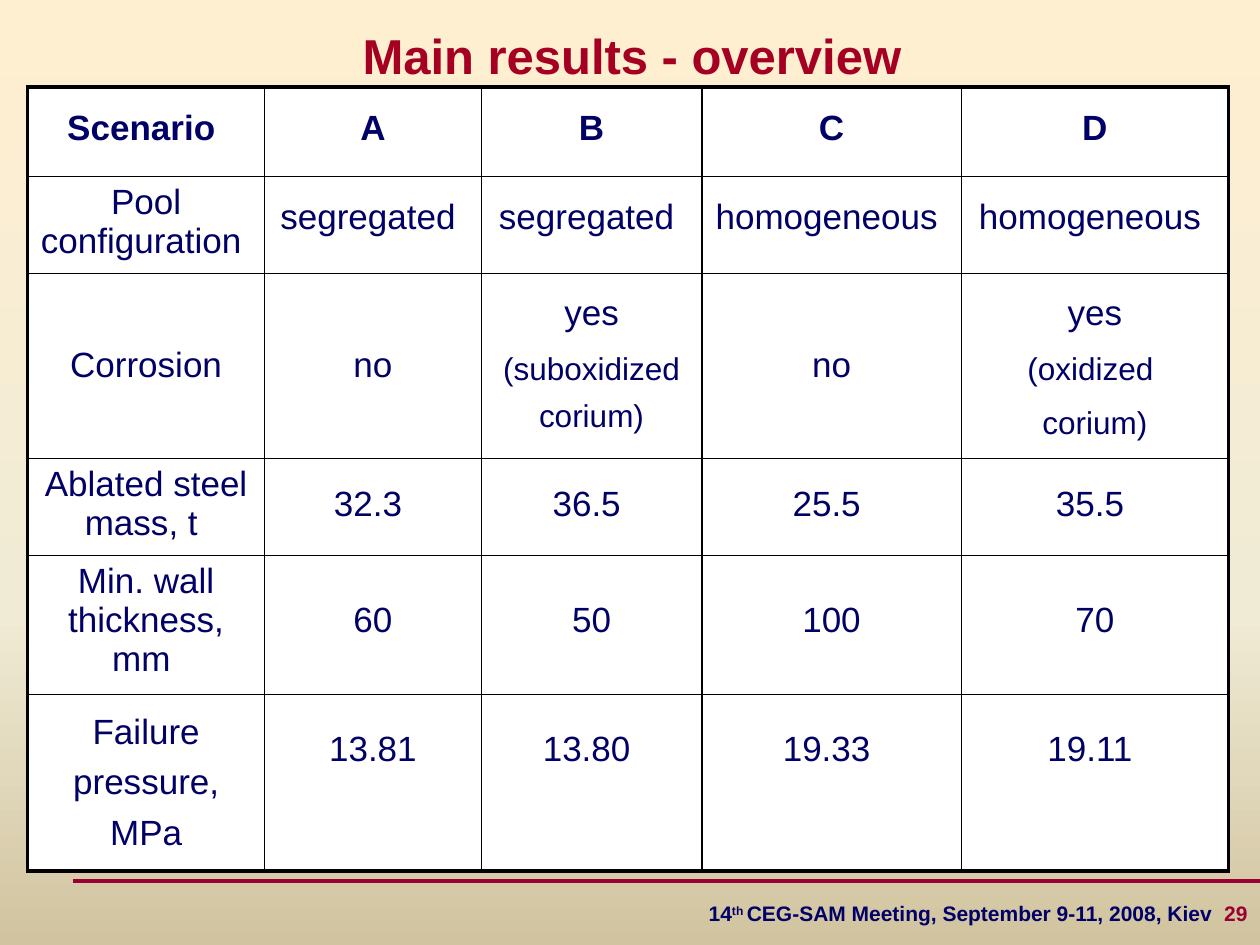
from copy import deepcopy
from pptx import Presentation
from pptx.dml.color import RGBColor
from pptx.enum import shapes, text
from pptx.oxml import parse_xml
from pptx.oxml.ns import nsdecls, qn
from pptx.util import Inches, Pt

NAVY = RGBColor(0x00, 0x00, 0x66)
CRIMSON = RGBColor(0xA5, 0x00, 0x21)
MAROON = RGBColor(0x99, 0x00, 0x33)
WHITE = RGBColor(0xFF, 0xFF, 0xFF)
SKY = [(0, RGBColor(0xFF, 0xEF, 0xD1)), (0.65, RGBColor(0xF0, 0xEB, 0xD5)),
       (1, RGBColor(0xD1, 0xC3, 0x9F))]

MULTI_SPACING = 1.35
COLS = [1.88, 1.72, 1.75, 2.06, 2.12]
ROWS = [  # height, label line spacing, value line spacing, cells
    (0.71, 1.4, 1.4, ["Scenario ", "A", "B", "C", "D"]),
    (0.77, 1, 1.4, ["Pool configuration ", "segregated ", "segregated ",
                    "homogeneous ", "homogeneous "]),
    (1.46, 2.7, 2.7, ["Corrosion", "no", "yes\n(suboxidized corium)", "no",
                      "yes\n(oxidized \ncorium)"]),
    (0.77, 1, 1.5, ["Ablated steel mass, t ", "32.3 ", "36.5 ", "25.5 ", "35.5 "]),
    (1.1, 1, 2, ["Min. wall thickness, mm ", "60", "50", "100", "70"]),
    (1.4, 1.3, 1.75, ["Failure pressure, MPa", "13.81", "13.80 ", "19.33 ", "19.11 "]),
]


def style(r, size, color, bold=False):
    """Format a run in Arial."""
    r.font.name, r.font.size, r.font.bold = "Arial", Pt(size), bold
    r.font.color.rgb = color


def set_background(s):
    """Fill the slide with a vertical three-stop gradient."""
    fill = s.background.fill
    fill.gradient()
    fill.gradient_angle = 270
    stops = s.element.find(".//" + qn("a:gsLst"))
    stops.append(deepcopy(stops[0]))
    for stop, (position, color) in zip(fill.gradient_stops, SKY):
        stop.position = position
        stop.color.rgb = color


def set_title(s, left, top, width, height):
    """Place and format the slide title."""
    sp = s.shapes.title
    sp.left, sp.top, sp.width, sp.height = map(Inches, (left, top, width, height))
    tf = sp.text_frame
    tf.text = "Main results - overview"
    tf.auto_size = text.MSO_AUTO_SIZE.NONE
    tf.vertical_anchor = text.MSO_ANCHOR.MIDDLE
    tf.margin_top = tf.margin_bottom = Inches(0.02)
    p = tf.paragraphs[0]
    p.alignment = text.PP_ALIGN.CENTER
    style(p.runs[0], 28, CRIMSON, True)


def add_borders(cell, outer):
    """Draw the four cell borders, thicker on the table's outer sides."""
    tc_pr = cell._tc.get_or_add_tcPr()
    for side in "LRTB":
        width = Pt(2.25 if side in outer else 1)
        tc_pr.append(parse_xml(
            f'<a:ln{side} {nsdecls("a")} w="{width}"><a:solidFill>'
            f'<a:srgbClr val="000000"/></a:solidFill></a:ln{side}>'))


def fill_cell(cell, words, spacing, bold):
    """Write centred text, with any further paragraphs smaller."""
    cell.fill.solid()
    cell.fill.fore_color.rgb = WHITE
    tf = cell.text_frame
    tf.text = words
    if len(tf.paragraphs) > 1:
        spacing = MULTI_SPACING
    for i, p in enumerate(tf.paragraphs):
        p.alignment = text.PP_ALIGN.CENTER
        p.line_spacing = float(spacing)
        p.space_before = Pt(4 if i else 0)
        style(p.runs[0], 18 if i else 20, NAVY, bold)


def add_results(s, left, top):
    """Add the table comparing the four scenarios."""
    width, height = sum(COLS), sum(row[0] for row in ROWS)
    table = s.shapes.add_table(len(ROWS), len(COLS), Inches(left), Inches(top),
                               Inches(width), Inches(height)).table
    table.first_row = table.horz_banding = False
    for column, w in zip(table.columns, COLS):
        column.width = Inches(w)
    last_row, last_col = len(ROWS) - 1, len(COLS) - 1
    for i, (h, label_spacing, value_spacing, cells) in enumerate(ROWS):
        table.rows[i].height = Inches(h)
        for j, words in enumerate(cells):
            cell = table.cell(i, j)
            edges = {"L": j == 0, "R": j == last_col, "T": i == 0, "B": i == last_row}
            add_borders(cell, [side for side in edges if edges[side]])
            cell.margin_left = cell.margin_right = Inches(0.1)
            cell.margin_top = cell.margin_bottom = Inches(0.05)
            fill_cell(cell, words, value_spacing if j else label_spacing, i == 0)


def add_footer(s, left, top, width, height):
    """Add the rule and the meeting line with the page number."""
    rule = s.shapes.add_connector(shapes.MSO_CONNECTOR.STRAIGHT, Inches(0.58),
                                  Inches(top - 0.01), Inches(10), Inches(top - 0.01))
    rule.line.color.rgb = MAROON
    rule.line.width = Pt(2.25)
    rule._element.spPr.append(parse_xml(f'<a:effectLst {nsdecls("a")}/>'))
    tf = s.shapes.add_textbox(*map(Inches, (left, top, width, height))).text_frame
    tf.word_wrap = False
    tf.vertical_anchor = text.MSO_ANCHOR.MIDDLE
    p = tf.paragraphs[0]
    p.alignment = text.PP_ALIGN.RIGHT
    for words, color in [("14", NAVY), ("th ", NAVY),
                         ("CEG-SAM Meeting, September 9-11, 2008, Kiev  ", NAVY),
                         ("29", MAROON)]:
        r = p.add_run()
        r.text = words
        style(r, 12, color, True)
    p.runs[1].font._element.set("baseline", "30000")


def main():
    """Build and save the slide."""
    prs = Presentation()
    prs.slide_width, prs.slide_height = Inches(10), Inches(7.5)
    s = prs.slides.add_slide(prs.slide_layouts[5])
    set_background(s)
    add_footer(s, 5.4, 7, 4.6, 0.5)
    set_title(s, 0.25, 0.16, 9.53, 0.55)
    add_results(s, 0.22, 0.69)
    prs.save("out.pptx")


if __name__ == "__main__":
    main()
